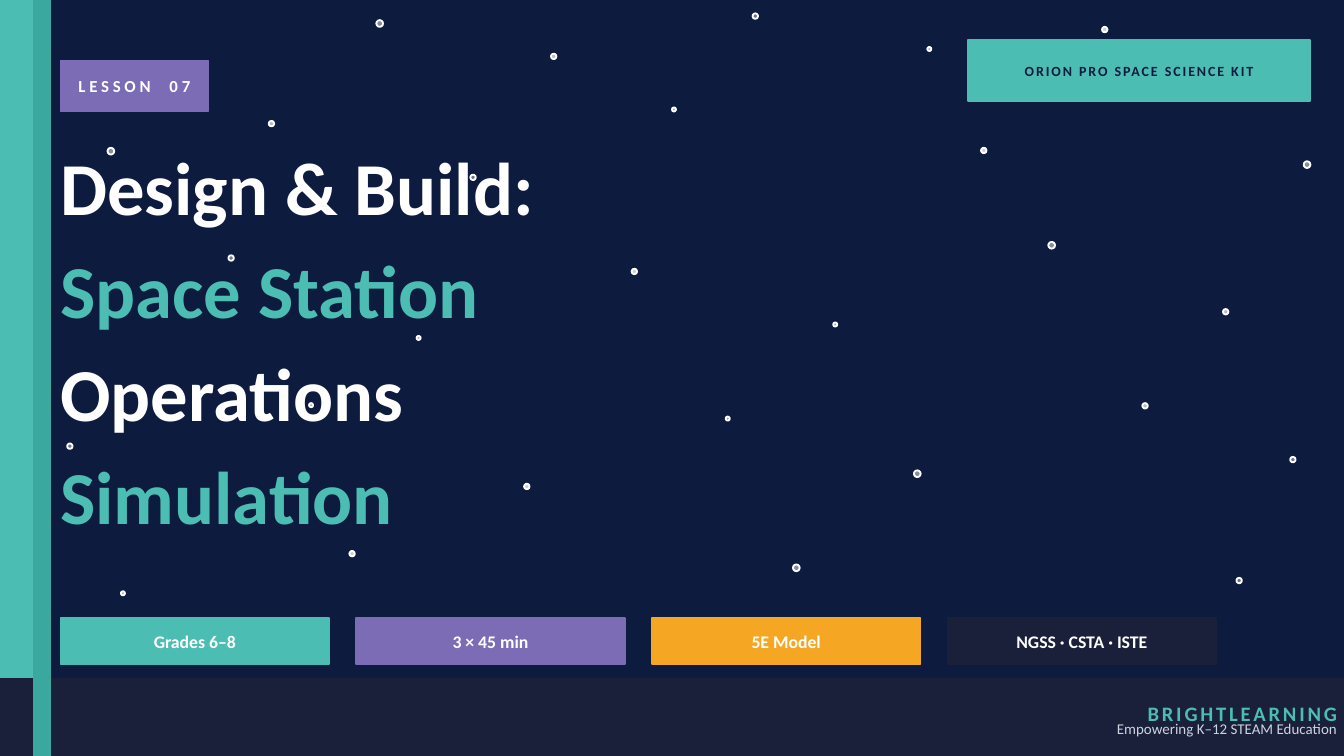
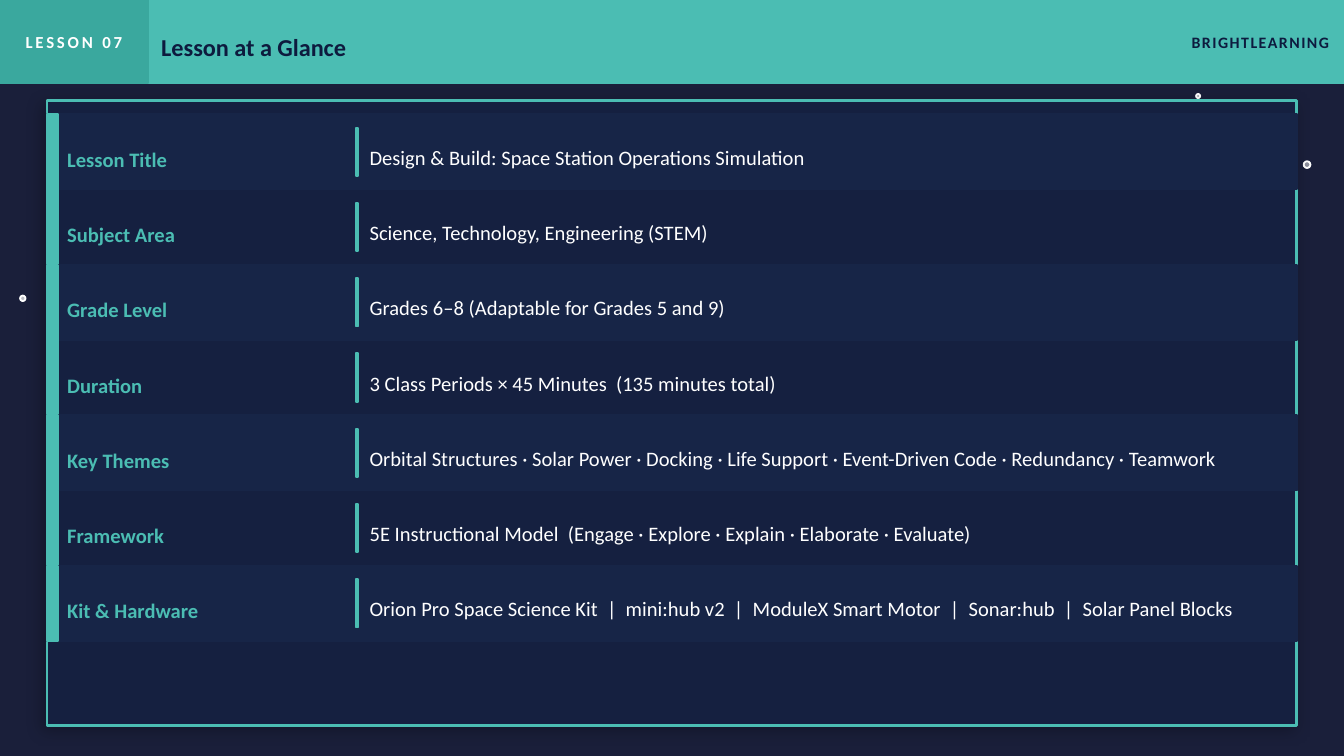
import lxml.etree
import pptx
import pptx.dml.color
import pptx.enum.shapes
import pptx.enum.text
import pptx.oxml.ns
import pptx.util

RGBColor = pptx.dml.color.RGBColor
PP_ALIGN = pptx.enum.text.PP_ALIGN
MSO_SHAPE = pptx.enum.shapes.MSO_SHAPE
MSO_ANCHOR = pptx.enum.text.MSO_ANCHOR

# Lengths are px, 200 to the inch
PX = 4572
WIDTH, HEIGHT = 2000, 1125
FONT = "Calibri"
BRAND = "BRIGHTLEARNING"

WHITE = RGBColor(0xFF, 0xFF, 0xFF)
NAVY = RGBColor(0x0D, 0x1B, 0x3E)
INK = RGBColor(0x1A, 0x1F, 0x3A)
PANEL = RGBColor(0x15, 0x20, 0x40)
ROW = RGBColor(0x17, 0x25, 0x47)
TEAL = RGBColor(0x4B, 0xBD, 0xB3)
DARK_TEAL = RGBColor(0x3A, 0xA8, 0x9E)
PURPLE = RGBColor(0x7B, 0x6C, 0xB5)
ORANGE = RGBColor(0xF5, 0xA6, 0x23)
SILVER = RGBColor(0xCB, 0xD5, 0xE1)


def add_block(slide, box, fill, line=None, line_width=1, kind=MSO_SHAPE.RECTANGLE):
    shape = slide.shapes.add_shape(kind, *[length * PX for length in box])
    shape.shadow.inherit = False
    shape.fill.solid()
    shape.fill.fore_color.rgb = fill
    shape.line.color.rgb = line or fill
    shape.line.width = pptx.util.Pt(line_width)
    return shape


def add_label(slide, box, text, size, color, bold=True, align=PP_ALIGN.LEFT,
              spacing=0, top=0, right=0, anchor=MSO_ANCHOR.MIDDLE):
    label = slide.shapes.add_textbox(*[length * PX for length in box])
    text_frame = label.text_frame
    text_frame.word_wrap = True
    text_frame.vertical_anchor = anchor
    text_frame.margin_left = text_frame.margin_bottom = 0
    text_frame.margin_top, text_frame.margin_right = top * PX, right * PX
    text_frame.text = text
    for paragraph in text_frame.paragraphs:
        paragraph.alignment = align
        for run in paragraph.runs:
            run.font.name = FONT
            run.font.size = pptx.util.Pt(size)
            run.font.bold = bold
            run.font.color.rgb = color
            if spacing:
                run.font._element.set("spc", str(round(spacing * 100)))
    return label


presentation = pptx.Presentation()
presentation.slide_width, presentation.slide_height = WIDTH * PX, HEIGHT * PX
cover = presentation.slides.add_slide(presentation.slide_layouts[6])
glance = presentation.slides.add_slide(presentation.slide_layouts[6])

# Backgrounds and stars: left, top, diameter, opacity in percent
cover_stars = [
    (560, 30, 10, 50), (820, 80, 8, 70), (1120, 20, 8, 40), (1380, 70, 6, 65),
    (1640, 40, 8, 80), (160, 220, 10, 50), (400, 180, 8, 70), (700, 260, 8, 40),
    (1000, 160, 6, 65), (1460, 220, 8, 80), (1940, 240, 10, 50), (340, 380, 8, 40),
    (620, 500, 6, 65), (940, 400, 8, 80), (1240, 480, 6, 60), (1560, 360, 10, 50),
    (1820, 460, 8, 70), (100, 660, 8, 40), (460, 600, 6, 65), (780, 720, 8, 80),
    (1080, 620, 6, 60), (1360, 700, 10, 50), (1700, 600, 8, 70), (1920, 680, 8, 40),
    (180, 880, 6, 65), (520, 820, 8, 80), (1180, 840, 10, 50), (1480, 920, 8, 70),
    (1840, 860, 8, 40),
]
glance_stars = [(1780, 140, 6, 60), (1940, 240, 10, 50), (30, 440, 8, 70)]

for slide, background, stars in [(cover, NAVY, cover_stars), (glance, INK, glance_stars)]:
    slide.background.fill.solid()
    slide.background.fill.fore_color.rgb = background
    for left, top, diameter, opacity in stars:
        star = add_block(slide, (left, top, diameter, diameter), WHITE, kind=MSO_SHAPE.OVAL)
        fill_color = star._element.spPr.find(".//" + pptx.oxml.ns.qn("a:srgbClr"))
        alpha = lxml.etree.SubElement(fill_color, pptx.oxml.ns.qn("a:alpha"))
        alpha.set("val", str(opacity * 1000))

# Cover: side and bottom bands
add_block(cover, (0, 0, 50, HEIGHT), TEAL)
add_block(cover, (0, 1010, WIDTH, 115), INK)
add_block(cover, (50, 0, 24, HEIGHT), DARK_TEAL)

# Cover: kit and lesson badges
badges = [
    ((1440, 60, 510, 90), TEAL, "ORION PRO SPACE SCIENCE KIT", 7.5, NAVY, 1),
    ((90, 90, 220, 76), PURPLE, "LESSON  07", 9, WHITE, 2),
]

# Cover: row of facts, styled like the badges
facts = [("Grades 6–8", TEAL), ("3 × 45 min", PURPLE),
         ("5E Model", ORANGE), ("NGSS · CSTA · ISTE", INK)]
for index, (fact, fill) in enumerate(facts):
    badges.append(((90 + index * 440, 920, 400, 68), fill, fact, 9.5, WHITE, 0))
for box, fill, text, size, color, spacing in badges:
    add_block(cover, box, fill)
    add_label(cover, box, text, size, color, align=PP_ALIGN.CENTER, spacing=spacing)

# Cover: title with alternating colours
title = add_label(cover, (90, 190, 1260, 720),
                  "Design & Build:\nSpace Station\nOperations\nSimulation",
                  40, WHITE, anchor=MSO_ANCHOR.TOP)
for index, paragraph in enumerate(title.text_frame.paragraphs):
    paragraph.line_spacing = 1.15
    paragraph.runs[0].font.color.rgb = (WHITE, TEAL)[index % 2]

# Cover: footer
add_label(cover, (1500, 1020, 490, 84), BRAND, 11, TEAL, align=PP_ALIGN.RIGHT, spacing=1.5)
add_label(cover, (1100, 1056, 890, 56), "Empowering K–12 STEAM Education", 8, SILVER,
          bold=False, align=PP_ALIGN.RIGHT)

# Glance: header band
add_block(glance, (0, 0, WIDTH, 124), TEAL)
add_block(glance, (0, 0, 220, 124), DARK_TEAL)
add_label(glance, (0, 0, 220, 124), "LESSON 07", 9, WHITE, align=PP_ALIGN.CENTER, spacing=1.5)
add_label(glance, (240, 0, 1500, 124), "Lesson at a Glance", 13, NAVY, top=16)
add_label(glance, (1540, 0, 460, 124), BRAND, 8.5, NAVY,
          align=PP_ALIGN.RIGHT, spacing=0.8, right=22)

# Glance: panel with a soft shadow
panel = add_block(glance, (70, 150, 1860, 930), PANEL, line=TEAL, line_width=1.5)
effects = panel._element.spPr.find(pptx.oxml.ns.qn("a:effectLst"))
shadow = lxml.etree.SubElement(effects, pptx.oxml.ns.qn("a:outerShdw"))
shadow.set("blurRad", str(pptx.util.Pt(8)))
shadow.set("dist", str(pptx.util.Pt(3)))
shadow.set("dir", str(135 * 60000))
shadow_color = lxml.etree.SubElement(shadow, pptx.oxml.ns.qn("a:srgbClr"))
shadow_color.set("val", "000000")
lxml.etree.SubElement(shadow_color, pptx.oxml.ns.qn("a:alpha")).set("val", "25000")

# Glance: lesson details, every other row shaded
details = [
    ("Lesson Title", "Design & Build: Space Station Operations Simulation"),
    ("Subject Area", "Science, Technology, Engineering (STEM)"),
    ("Grade Level", "Grades 6–8 (Adaptable for Grades 5 and 9)"),
    ("Duration", "3 Class Periods × 45 Minutes  (135 minutes total)"),
    ("Key Themes", "Orbital Structures · Solar Power · Docking · Life Support · "
                   "Event-Driven Code · Redundancy · Teamwork"),
    ("Framework", "5E Instructional Model  (Engage · Explore · Explain · Elaborate · Evaluate)"),
    ("Kit & Hardware", "Orion Pro Space Science Kit  |  mini:hub v2  |  ModuleX Smart Motor  |  "
                       "Sonar:hub  |  Solar Panel Blocks"),
]
ROW_HEIGHT = 112
for index, (name, value) in enumerate(details):
    top = 170 + index * ROW_HEIGHT
    if index % 2 == 0:
        add_block(glance, (70, top, 1860, ROW_HEIGHT), ROW)
    add_block(glance, (70, top, 16, ROW_HEIGHT), TEAL)
    add_label(glance, (100, top + 10, 420, 92), name, 11, TEAL, top=22)
    add_block(glance, (530, top + 20, 3, 72), TEAL)
    add_label(glance, (550, top + 10, 1350, 92), value, 11, WHITE, bold=False, top=16)

presentation.save("out.pptx")
